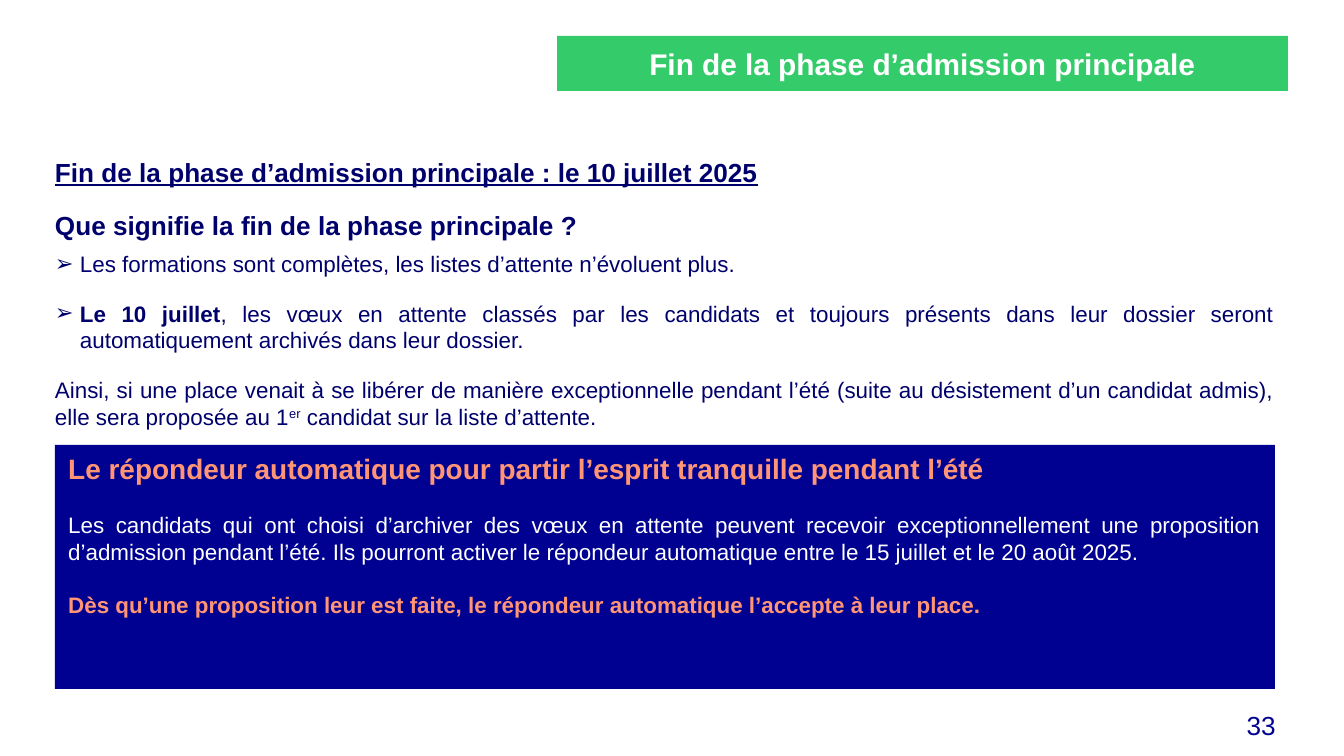
from lxml import etree
from pptx import Presentation
from pptx.dml.color import RGBColor
from pptx.enum.shapes import MSO_SHAPE
from pptx.enum.text import MSO_ANCHOR, MSO_AUTO_SIZE, PP_ALIGN
from pptx.oxml.ns import qn
from pptx.util import Pt

LEFT, CENTER, RIGHT, JUSTIFY = PP_ALIGN.LEFT, PP_ALIGN.CENTER, PP_ALIGN.RIGHT, PP_ALIGN.JUSTIFY
TOP, MIDDLE = MSO_ANCHOR.TOP, MSO_ANCHOR.MIDDLE
NO_AUTOFIT = MSO_AUTO_SIZE.NONE
RECTANGLE = MSO_SHAPE.RECTANGLE

PX = 914400 / 134.4  # EMU per pixel


class Theme:
    font = "Arial"
    navy = RGBColor(0x00, 0x00, 0x91)
    ink = RGBColor(0x00, 0x00, 0x6D)
    green = RGBColor(0x34, 0xCB, 0x6A)
    coral = RGBColor(0xFF, 0x95, 0x75)
    white = RGBColor(0xFF, 0xFF, 0xFF)
    title, panel_title, heading, text = 16, 15, 14, 12


def px(*lengths):
    return [round(length * PX) for length in lengths]


def write(frame, *parts, size=Theme.text, color=Theme.ink, bold=False, underline=False,
          align=LEFT, after=0, bullet=None, hang=0):
    """Add a paragraph; a part is plain text or a (text, style) pair."""
    paragraph = frame.paragraphs[0]
    if paragraph.runs:
        paragraph = frame.add_paragraph()
    paragraph.alignment = align
    paragraph.space_before, paragraph.space_after = Pt(0), Pt(after)
    props = paragraph._p.get_or_add_pPr()
    indent = px(hang)[0]
    props.set("marL", str(indent))
    props.set("indent", str(-indent))
    if bullet:
        etree.SubElement(props, qn("a:buFont"), typeface=Theme.font)
        etree.SubElement(props, qn("a:buChar"), char=bullet)
    else:
        etree.SubElement(props, qn("a:buNone"))
    for part in parts:
        text, style = (part, None) if isinstance(part, str) else part
        run = paragraph.add_run()
        run.text = text
        run.font.name, run.font.size = Theme.font, Pt(size)
        run.font.color.rgb = color
        run.font.bold = bold or style == "bold"
        run.font.underline = underline
        if style == "superscript":
            run._r.get_or_add_rPr().set("baseline", "30000")


prs = Presentation()
prs.slide_width, prs.slide_height = px(1344, 756)
slide = prs.slides.add_slide(prs.slide_layouts[1])
title, body = slide.shapes.title, slide.placeholders[1]

# Title: green rounded banner
title.left, title.top, title.width, title.height = px(557, 36, 731, 55)
banner = etree.SubElement(title._element.spPr, qn("a:prstGeom"), prst="roundRect")
adjustments = etree.SubElement(banner, qn("a:avLst"))
etree.SubElement(adjustments, qn("a:gd"), name="adj", fmla="val 16667")
title.fill.solid()
title.fill.fore_color.rgb = Theme.green
title.text_frame.auto_size = NO_AUTOFIT
title.text_frame.vertical_anchor = MIDDLE
write(title.text_frame, "Fin de la phase d’admission principale",
      size=Theme.title, color=Theme.white, bold=True, align=CENTER)

# Body: what the end of the phase means
body.left, body.top, body.width, body.height = px(55, 116, 1220, 574)
explanation = body.text_frame
explanation.auto_size = NO_AUTOFIT
explanation.vertical_anchor = TOP
explanation.margin_left = explanation.margin_right = explanation.margin_bottom = 0
explanation.margin_top = px(40)[0]
write(explanation, "Fin de la phase d’admission principale : le 10 juillet 2025",
      size=Theme.heading, bold=True, underline=True, align=JUSTIFY, after=12)
write(explanation, "Que signifie la fin de la phase principale ?",
      size=Theme.heading, bold=True, align=JUSTIFY, after=5)
consequences = [
    ["Les formations sont complètes, les listes d’attente n’évoluent plus."],
    [("Le 10 juillet", "bold"),
     ", les vœux en attente classés par les candidats et toujours présents dans leur "
     "dossier seront automatiquement archivés dans leur dossier."],
]
for consequence in consequences:
    write(explanation, *consequence, align=JUSTIFY, after=12, bullet="➢", hang=25)
write(explanation,
      "Ainsi, si une place venait à se libérer de manière exceptionnelle pendant l’été "
      "(suite au désistement d’un candidat admis), elle sera proposée au 1",
      ("er", "superscript"), " candidat sur la liste d’attente.", align=JUSTIFY)

# Navy panel: automatic responder
panel = slide.shapes.add_shape(RECTANGLE, *px(55, 445, 1220, 244))
panel.shadow.inherit = False
panel.fill.solid()
panel.fill.fore_color.rgb = Theme.navy
panel.line.fill.background()
responder = panel.text_frame
responder.word_wrap = True
responder.vertical_anchor = TOP
write(responder, "Le répondeur automatique pour partir l’esprit tranquille pendant l’été",
      size=Theme.panel_title, color=Theme.coral, bold=True, after=14)
write(responder,
      "Les candidats qui ont choisi d’archiver des vœux en attente peuvent recevoir "
      "exceptionnellement une proposition d’admission pendant l’été. Ils pourront activer "
      "le répondeur automatique entre le 15 juillet et le 20 août 2025.",
      color=Theme.white, align=JUSTIFY, after=14)
write(responder,
      "Dès qu’une proposition leur est faite, le répondeur automatique l’accepte à leur place.",
      color=Theme.coral, bold=True)

# Page number
page_number = slide.shapes.add_textbox(*px(1117, 703, 172, 52)).text_frame
page_number.word_wrap = True
write(page_number, "33", size=Theme.heading, color=Theme.navy, align=RIGHT)

prs.save("out.pptx")
